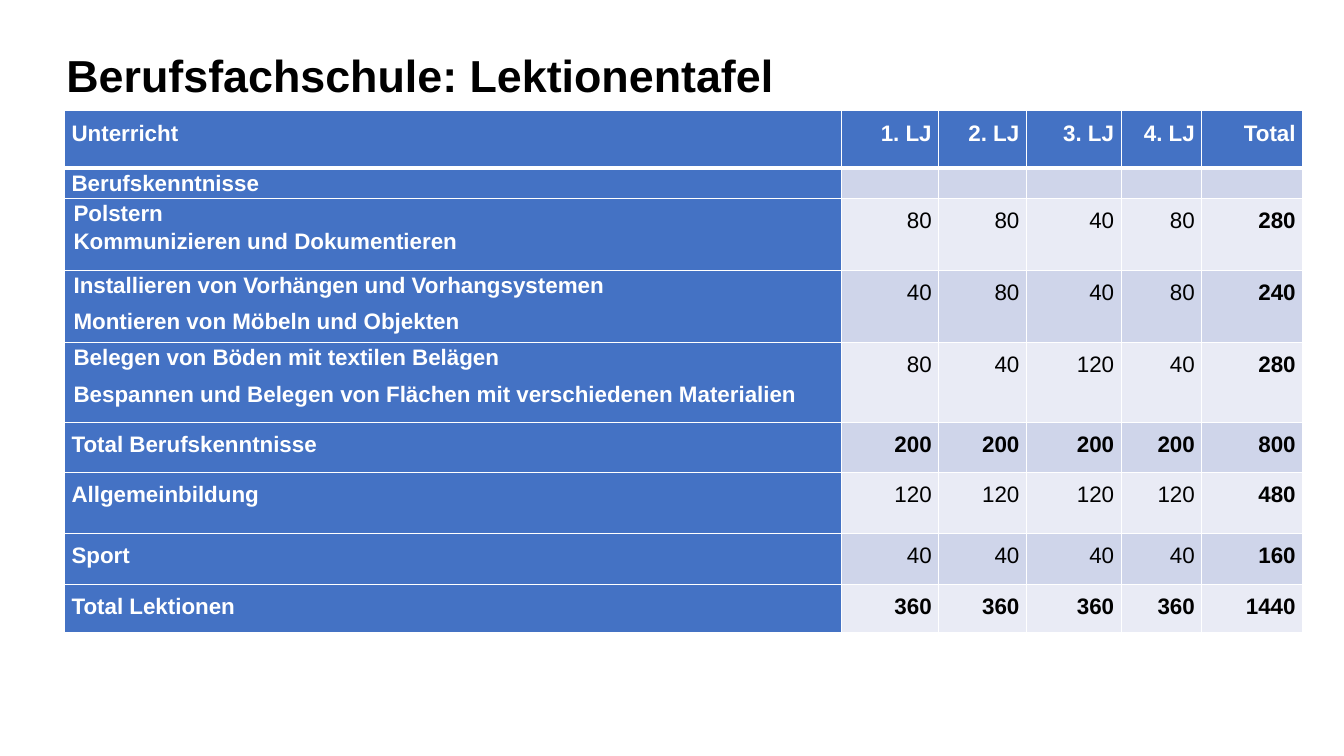
from dataclasses import dataclass

from lxml.etree import SubElement
from pptx import Presentation
from pptx.dml.color import RGBColor
from pptx.enum.text import MSO_ANCHOR as Anchor, PP_ALIGN as Align
from pptx.oxml.ns import qn
from pptx.slide import Slide
from pptx.table import _Cell as Cell
from pptx.text.text import TextFrame
from pptx.util import Inches, Pt


@dataclass(frozen=True)
class Theme:
    font: str = "Arial"
    title_size: float = 32
    table_size: float = 16
    black: str = "000000"
    white: str = "FFFFFF"
    header_fill: str = "4472C4"
    band_fills: tuple[str, str] = ("CFD5EA", "E9EBF5")
    border_width: float = 1
    header_border_width: float = 3


@dataclass(frozen=True)
class LessonRow:
    label: str
    height: float
    lessons: tuple[int, ...] = ()
    is_total: bool = False
    is_subject: bool = False
    label_spacing: float = 25

    @property
    def values(self) -> list[str]:
        if not self.lessons:
            return [""] * len(YEARS)
        return [str(number) for number in (*self.lessons, sum(self.lessons))]


THEME = Theme()
YEARS = ("1. LJ", "2. LJ", "3. LJ", "4. LJ", "Total")
COLUMN_WIDTHS = (7.71, 0.96, 0.87, 0.94, 0.8, 1)
HEADER_HEIGHT = 0.57
NARROW, WIDE = 20, 25

# "\v" is a line break inside a paragraph, "\n" starts a new paragraph.
LESSON_ROWS = (
    LessonRow("Berufskenntnisse", 0.27, label_spacing=NARROW),
    LessonRow("Polstern \vKommunizieren und Dokumentieren", 0.71,
              (80, 80, 40, 80), is_subject=True, label_spacing=NARROW),
    LessonRow("Installieren von Vorhängen und Vorhangsystemen\n"
              "Montieren von Möbeln und Objekten", 0.72,
              (40, 80, 40, 80), is_subject=True, label_spacing=NARROW),
    LessonRow("Belegen von Böden mit textilen Belägen\n"
              "Bespannen und Belegen von Flächen mit verschiedenen Materialien", 0.79,
              (80, 40, 120, 40), is_subject=True, label_spacing=NARROW),
    LessonRow("Total Berufskenntnisse", 0.5, (200,) * 4, is_total=True),
    LessonRow("Allgemeinbildung", 0.6, (120,) * 4),
    LessonRow("Sport", 0.51, (40,) * 4),
    LessonRow("Total Lektionen", 0.48, (360,) * 4, is_total=True),
)


def format_runs(text_frame: TextFrame, size: float, color: str, bold: bool) -> None:
    for paragraph in text_frame.paragraphs:
        for run in paragraph.runs:
            run.font.name = THEME.font
            run.font.size = Pt(size)
            run.font.bold = bold
            run.font.color.rgb = RGBColor.from_string(color)


def set_borders(cell: Cell, top: float, bottom: float) -> None:
    """Draw white borders; call before the fill, which must follow them in the XML."""
    properties = cell._tc.get_or_add_tcPr()
    side = THEME.border_width
    for tag, width in (("lnL", side), ("lnR", side), ("lnT", top), ("lnB", bottom)):
        line = SubElement(properties, qn(f"a:{tag}"), w=str(Pt(width)))
        fill = SubElement(line, qn("a:solidFill"))
        SubElement(fill, qn("a:srgbClr"), val=THEME.white)


def fill_cell(cell: Cell, text: str, fill: str, color: str, bold: bool,
              align: Align, spacing: float, indented: bool = False) -> None:
    cell.margin_left = cell.margin_right = Inches(0.07)
    cell.margin_top = cell.margin_bottom = 0
    cell.fill.solid()
    cell.fill.fore_color.rgb = RGBColor.from_string(fill)
    cell.text_frame.text = text
    for index, paragraph in enumerate(cell.text_frame.paragraphs):
        if indented:
            paragraph._p.get_or_add_pPr().set("marL", str(Inches(0.02)))
        paragraph.alignment = align
        paragraph.line_spacing = Pt(spacing)
        paragraph.space_before = Pt(3 if index else 0)
        paragraph.space_after = Pt(3)
    format_runs(cell.text_frame, THEME.table_size, color, bold)


def add_title(slide: Slide, text: str) -> None:
    box = slide.shapes.add_textbox(Inches(0.56), Inches(0.4), Inches(12.53), Inches(0.74))
    text_frame = box.text_frame
    text_frame.word_wrap = True
    text_frame.vertical_anchor = Anchor.MIDDLE
    text_frame.text = text
    text_frame.paragraphs[0].line_spacing = 0.9
    format_runs(text_frame, THEME.title_size, THEME.black, True)


def add_lesson_table(slide: Slide) -> None:
    heights = [HEADER_HEIGHT, *(row.height for row in LESSON_ROWS)]
    table = slide.shapes.add_table(
        len(heights), len(COLUMN_WIDTHS), Inches(0.64), Inches(1.1),
        Inches(sum(COLUMN_WIDTHS)), Inches(sum(heights))).table
    table.first_col = True
    for column, width in zip(table.columns, COLUMN_WIDTHS):
        column.width = Inches(width)
    for index, height in enumerate(heights):
        table.rows[index].height = Inches(height)
        for cell in table.rows[index].cells:
            set_borders(
                cell,
                top=THEME.header_border_width if index == 1 else THEME.border_width,
                bottom=THEME.header_border_width if index == 0 else THEME.border_width)

    for column, text in enumerate(("Unterricht", *YEARS)):
        fill_cell(table.cell(0, column), text, THEME.header_fill, THEME.white, True,
                  Align.RIGHT if column else Align.LEFT, WIDE)
    for index, row in enumerate(LESSON_ROWS):
        fill_cell(table.cell(index + 1, 0), row.label, THEME.header_fill, THEME.white,
                  True, Align.LEFT, row.label_spacing, row.is_subject)
        for column, value in enumerate(row.values, start=1):
            fill_cell(table.cell(index + 1, column), value, THEME.band_fills[index % 2],
                      THEME.black, row.is_total or column == len(YEARS), Align.RIGHT,
                      WIDE if row.lessons else NARROW)


def main() -> None:
    presentation = Presentation()
    presentation.slide_width = Inches(13.33)
    presentation.slide_height = Inches(7.5)
    slide = presentation.slides.add_slide(presentation.slide_layouts[6])
    add_title(slide, "Berufsfachschule: Lektionentafel")
    add_lesson_table(slide)
    presentation.save("out.pptx")


if __name__ == "__main__":
    main()
